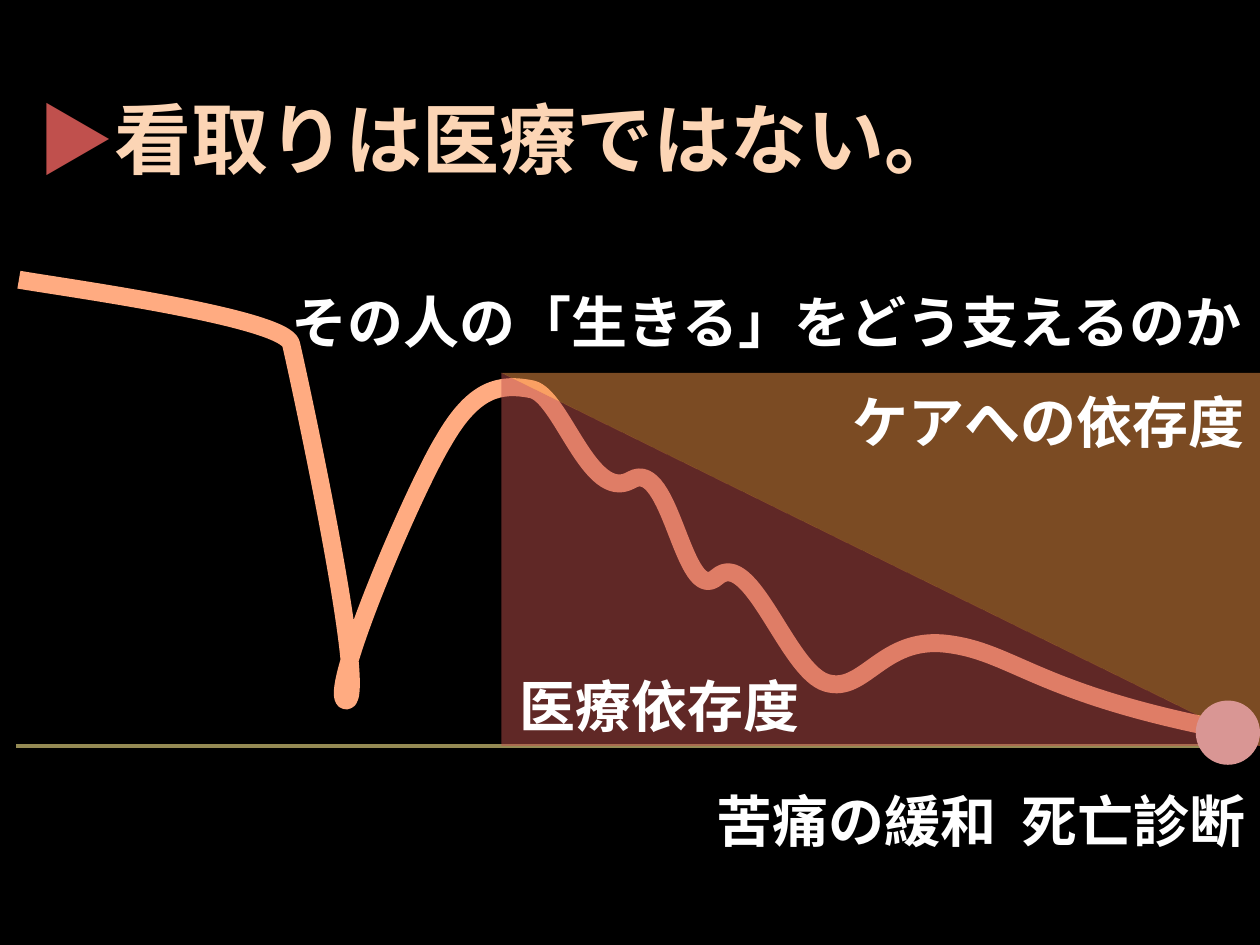
"""Build the slide on how care replaces medicine toward the end of life."""
from dataclasses import dataclass

from lxml.etree import SubElement
from pptx import Presentation
from pptx.dml.color import RGBColor
from pptx.enum.shapes import MSO_CONNECTOR, MSO_SHAPE
from pptx.enum.text import MSO_AUTO_SIZE, PP_ALIGN
from pptx.oxml.ns import qn
from pptx.util import Inches, Pt


@dataclass(frozen=True)
class Theme:
    font: str = "Noto Sans CJK JP"
    title_size: float = 44
    label_size: float = 32
    background: str = "000000"
    axis: str = "948A54"
    course: str = "FFAB81"
    medicine: str = "C0504D"
    care: str = "F79646"
    death: str = "D99694"
    title: str = "FCD5B5"
    label: str = "FFFFFF"


def add_text(shapes, box, runs, size, align):
    frame = shapes.add_textbox(*map(Inches, box)).text_frame
    frame.word_wrap = False
    frame.auto_size = MSO_AUTO_SIZE.SHAPE_TO_FIT_TEXT
    paragraph = frame.paragraphs[0]
    paragraph.alignment = align
    for words, color, bold in runs:
        run = paragraph.add_run()
        run.text = words
        run.font.color.rgb = RGBColor.from_string(color)
        for key, value in {"size": Pt(size), "bold": bold, "name": theme.font}.items():
            setattr(run.font, key, value)
        SubElement(run.font._element, qn("a:ea"), typeface=theme.font)


def add_solid(shapes, kind, box, color, rotation=0, opacity=100):
    solid = shapes.add_shape(kind, *map(Inches, box))
    solid.shadow.inherit = False
    solid.rotation = rotation
    solid.line.fill.background()
    solid.fill.solid()
    solid.fill.fore_color.rgb = RGBColor.from_string(color)
    if opacity < 100:
        tint = solid._element.spPr.find(qn("a:solidFill"))[0]
        SubElement(tint, qn("a:alpha"), val=str(opacity * 1000))


theme = Theme()
presentation = Presentation()
presentation.slide_width, presentation.slide_height = Inches(10), Inches(7.5)
slide = presentation.slides.add_slide(presentation.slide_layouts[6])
slide.background.fill.solid()
slide.background.fill.fore_color.rgb = RGBColor.from_string(theme.background)
shapes = slide.shapes

axis = shapes.add_connector(
    MSO_CONNECTOR.STRAIGHT, Inches(0.13), Inches(5.92), Inches(9.8), Inches(5.92)
)
axis.line.width = Pt(2.25)
axis.line.color.rgb = RGBColor.from_string(theme.axis)
SubElement(axis.line._get_or_add_ln(), qn("a:tailEnd"), type="arrow")
SubElement(axis._element.spPr, qn("a:effectLst"))

course_start = (0.15, 2.22)
course_curves = [
    [(0.49, 2.28), (2.26, 2.52), (2.31, 2.73)],
    [(2.36, 2.94), (2.93, 5.55), (2.75, 5.56)],
    [(2.57, 5.56), (3.27, 3.91), (3.52, 3.5)],
    [(3.76, 3.08), (3.97, 3.04), (4.22, 3.09)],
    [(4.46, 3.14), (4.68, 4), (5.01, 3.81)],
    [(5.33, 3.62), (5.42, 4.82), (5.69, 4.58)],
    [(5.96, 4.34), (6.25, 5.33), (6.56, 5.42)],
    [(6.86, 5.51), (7, 5.05), (7.51, 5.11)],
    [(8.03, 5.17), (8.21, 5.49), (9.66, 5.78)],
]
builder = shapes.build_freeform(*map(Inches, course_start))
builder.add_line_segments(
    [(Inches(x), Inches(y)) for curve in course_curves for x, y in curve], close=False
)
course = builder.convert_to_shape()
course.shadow.inherit = False
course.fill.background()
course.line.width = Pt(10.25)
course.line.color.rgb = RGBColor.from_string(theme.course)
course_path = next(course._element.iter(qn("a:path")))
segments = course_path.findall(qn("a:lnTo"))
for first in range(0, len(segments), 3):
    bezier = SubElement(course_path, qn("a:cubicBezTo"))
    for segment in segments[first:first + 3]:
        bezier.append(segment[0])
        course_path.remove(segment)

add_text(
    shapes, (0.2, 0.68, 7.61, 0.84),
    [("▶", theme.medicine, False), ("看取りは医療ではない。", theme.title, True)],
    theme.title_size, PP_ALIGN.LEFT,
)

for words, box, color, rotation in [
    ("医療依存度", (4.01, 5.28, 2.45, 0.64), theme.medicine, 0),
    ("ケアへの依存度", (6.65, 3.03, 3.34, 0.64), theme.care, 180),
]:
    dependence = shapes.add_group_shape().shapes
    add_solid(dependence, MSO_SHAPE.RIGHT_TRIANGLE, (3.98, 2.96, 6.02, 2.96),
              color, rotation, opacity=50)
    add_text(dependence, box, [(words, theme.label, True)],
             theme.label_size, PP_ALIGN.CENTER)

add_solid(shapes, MSO_SHAPE.OVAL, (9.49, 5.56, 0.51, 0.51), theme.death)

for words, box in [
    ("死亡診断", (8, 6.19, 2, 0.64)),
    ("苦痛の緩和", (5.57, 6.19, 2.45, 0.64)),
    ("その人の「生きる」をどう支えるのか", (2.17, 2.23, 7.83, 0.64)),
]:
    add_text(shapes, box, [(words, theme.label, True)],
             theme.label_size, PP_ALIGN.CENTER)

presentation.save("out.pptx")
